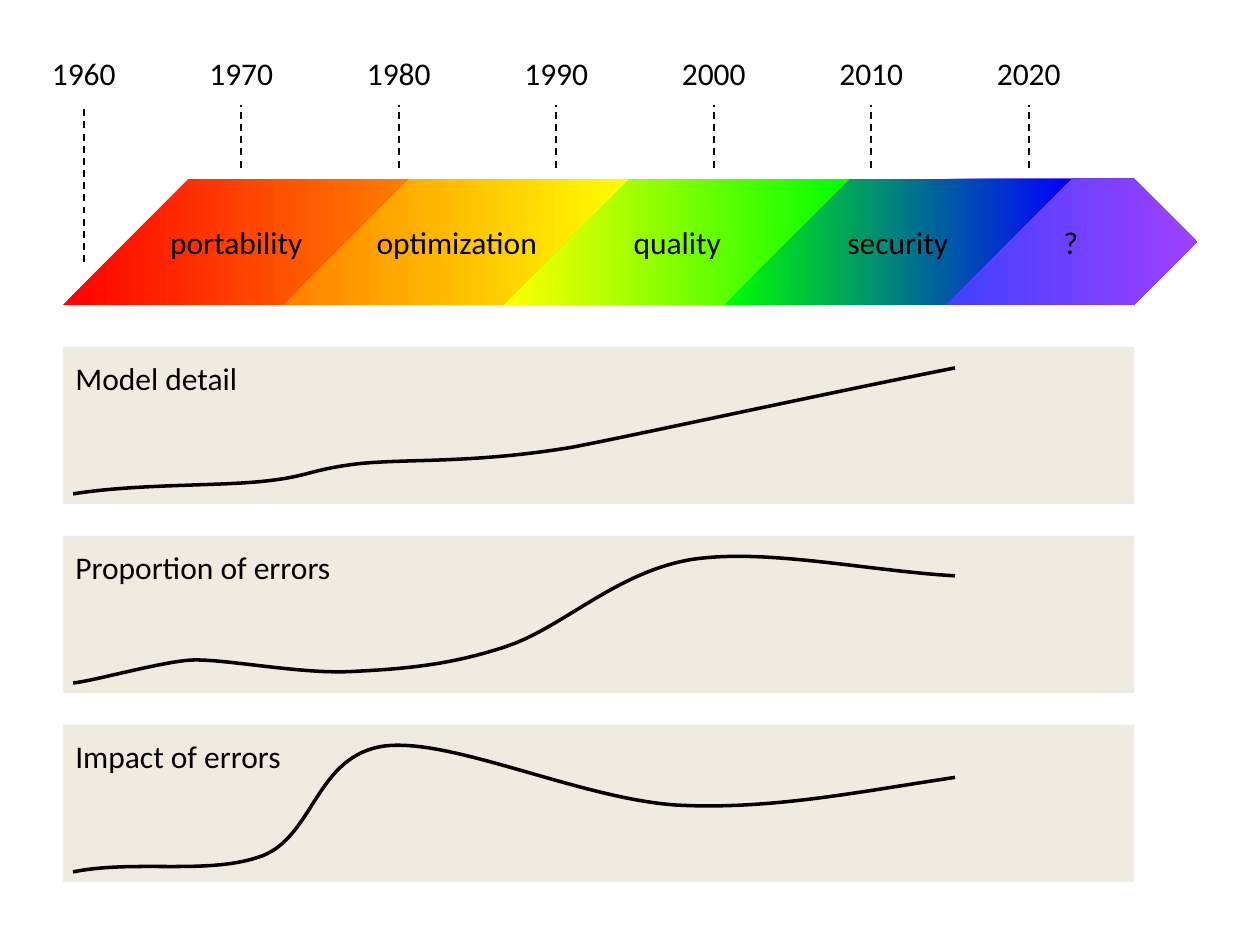
import pptx
import pptx.dml.color
import pptx.enum.dml
import pptx.enum.shapes
import pptx.enum.text
import pptx.oxml.ns
import pptx.oxml.xmlchemy
import pptx.util

Inches, Pt = pptx.util.Inches, pptx.util.Pt
SHAPE = pptx.enum.shapes.MSO_SHAPE
ALIGN = pptx.enum.text.PP_ALIGN
ANCHOR = pptx.enum.text.MSO_ANCHOR
qn = pptx.oxml.ns.qn
new_element = pptx.oxml.xmlchemy.OxmlElement

# Content
YEARS = [1960, 1970, 1980, 1990, 2000, 2010, 2020]
BANDS = [  # label, gradient start, gradient end
    ("portability", "FF0000", "FF7F00"),
    ("optimization", "FF7F00", "FFFF00"),
    ("quality", "FFFF00", "00FF00"),
    ("security", "00FF00", "0000FF"),
]
FUTURE = ("?", "0000FF", "7F00FF")
PANELS = [  # title, curve start, Bezier segments (control, control, end)
    ("Model detail", (0.58, 3.92), [
        ((1.08, 3.84), (1.71, 3.86), (2.09, 3.82)),
        ((2.47, 3.78), (2.44, 3.73), (2.85, 3.68)),
        ((3.26, 3.64), (3.75, 3.68), (4.54, 3.55)),
        ((5.11, 3.44), (6.47, 3.14), (7.58, 2.92))]),
    ("Proportion of errors", (0.58, 5.42), [
        ((0.72, 5.41), (1.25, 5.26), (1.5, 5.24)),
        ((1.75, 5.22), (2.36, 5.35), (2.78, 5.33)),
        ((3.2, 5.31), (3.57, 5.28), (4.02, 5.13)),
        ((4.47, 4.98), (4.89, 4.54), (5.49, 4.44)),
        ((6.08, 4.35), (6.88, 4.53), (7.58, 4.57))]),
    ("Impact of errors", (0.58, 6.92), [
        ((1.08, 6.82), (1.67, 6.95), (2.09, 6.79)),
        ((2.5, 6.62), (2.51, 5.99), (3.06, 5.92)),
        ((3.6, 5.86), (4.61, 6.34), (5.37, 6.39)),
        ((6.12, 6.43), (6.84, 6.28), (7.58, 6.17))]),
]

# Grid, in inches
LEFT = 0.5
YEAR_X, YEAR_STEP, YEAR_W = 0.25, 1.25, 0.83
BAND_Y, BAND_STEP, BAND_W, BAND_H = 1.42, 1.75, 2.75, 1
FUTURE_W = 2
PANEL_Y, PANEL_STEP, PANEL_W, PANEL_H = 2.75, 1.5, 8.5, 1.25

prs = pptx.Presentation()
prs.slide_width, prs.slide_height = Inches(10), Inches(7.5)
shapes = prs.slides.add_slide(prs.slide_layouts[6]).shapes


def rgb(color):
    return pptx.dml.color.RGBColor.from_string(color)


def add_shape(kind, x, y, w, h, fill=None):
    s = shapes.add_shape(kind, Inches(x), Inches(y), Inches(w), Inches(h))
    s.shadow.inherit = False
    s.line.fill.background()
    if fill:
        s.fill.solid()
        s.fill.fore_color.rgb = rgb(fill)
    return s


def set_gradient(s, start, end):
    s.fill.gradient()
    s.fill.gradient_angle = 0
    for stop, color, position in zip(s.fill.gradient_stops, (start, end), (0, 1)):
        stop.color.rgb = rgb(color)
        stop.position = position


def set_text(s, text, align=ALIGN.CENTER, anchor=ANCHOR.MIDDLE):
    tf = s.text_frame
    tf.word_wrap = True
    tf.vertical_anchor = anchor
    p = tf.paragraphs[0]
    p.text = text
    p.alignment = align
    p.font.name, p.font.size = "Calibri", Pt(18)
    p.font.color.rgb = rgb("000000")


def add_label(text, x, y, w, h):
    set_text(shapes.add_textbox(Inches(x), Inches(y), Inches(w), Inches(h)), text)


def add_curve(start, segments):
    """Join the end points, then turn each straight step into a Bezier one."""
    builder = shapes.build_freeform(Inches(start[0]), Inches(start[1]))
    builder.add_line_segments([(Inches(x), Inches(y)) for *_, (x, y) in segments], close=False)
    s = builder.convert_to_shape()
    s.shadow.inherit = False
    s.fill.background()
    s.line.color.rgb, s.line.width = rgb("000000"), Pt(2)
    steps = list(s._element.iter(qn("a:lnTo")))
    for step, (c1, c2, _) in zip(steps, segments):
        bezier = new_element("a:cubicBezTo")
        for x, y in (c1, c2):
            pt = new_element("a:pt")
            pt.set("x", str(Inches(x) - s.left))
            pt.set("y", str(Inches(y) - s.top))
            bezier.append(pt)
        bezier.append(step[0])
        step.getparent().replace(step, bezier)


# Open-ended arrow, notched by a white triangle
text, start, end = FUTURE
future_x = LEFT + len(BANDS) * BAND_STEP
arrow = add_shape(SHAPE.PENTAGON, future_x, BAND_Y, FUTURE_W, BAND_H)
set_gradient(arrow, start, end)
for color in arrow._element.spPr.iter(qn("a:srgbClr")):
    alpha = new_element("a:alpha")
    alpha.set("val", "75000")
    color.append(alpha)
notch = add_shape(SHAPE.RIGHT_TRIANGLE, future_x, BAND_Y, BAND_H, BAND_H, "FFFFFF")
notch._element.spPr.xfrm.set("flipV", "1")

# Slanted bands
for i, (_, start, end) in enumerate(BANDS):
    band = add_shape(SHAPE.PARALLELOGRAM, LEFT + i * BAND_STEP, BAND_Y, BAND_W, BAND_H)
    band.adjustments[0] = 1
    set_gradient(band, start, end)
for i, (label, *_) in enumerate(BANDS):
    add_label(label, LEFT + i * BAND_STEP, BAND_Y, BAND_W, BAND_H)
add_label(text, future_x, BAND_Y, FUTURE_W, BAND_H)

# Years with dashed markers; the first reaches down to the slanted edge
for i, year in enumerate(YEARS):
    x = YEAR_X + i * YEAR_STEP
    add_label(str(year), x, 0.33, YEAR_W, 0.5)
    center = Inches(x + YEAR_W / 2)
    bottom = 1.33 if i else 2.08
    marker = shapes.add_connector(pptx.enum.shapes.MSO_CONNECTOR.STRAIGHT,
                                  center, Inches(bottom), center, Inches(0.83))
    marker.line.color.rgb, marker.line.width = rgb("000000"), Pt(1)
    marker.line.dash_style = pptx.enum.dml.MSO_LINE.DASH
    marker._element.spPr.append(new_element("a:effectLst"))

# Panels with trend curves
for i, (title, start, segments) in enumerate(PANELS):
    panel = add_shape(SHAPE.RECTANGLE, LEFT, PANEL_Y + i * PANEL_STEP,
                      PANEL_W, PANEL_H, "EEECE1")
    set_text(panel, title, ALIGN.LEFT, ANCHOR.TOP)
    panel.text_frame.margin_top = Inches(0.1)
    add_curve(start, segments)

prs.save("out.pptx")
